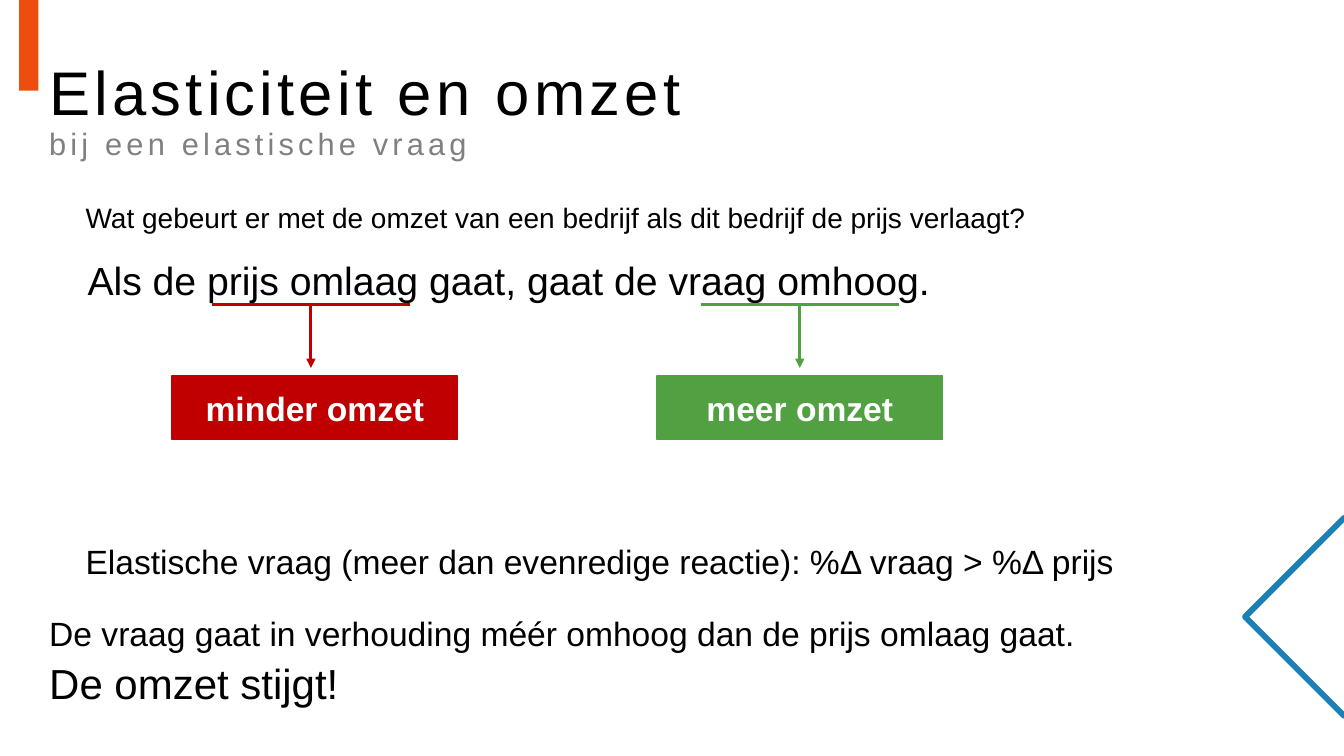
from dataclasses import dataclass
from lxml.etree import SubElement
from pptx import Presentation
from pptx.dml.color import RGBColor
from pptx.enum.shapes import MSO_CONNECTOR as Connector, MSO_SHAPE as Shape
from pptx.enum.text import MSO_ANCHOR as Anchor, PP_ALIGN as Align
from pptx.oxml.ns import qn
from pptx.util import Pt


@dataclass(frozen=True)
class Theme:
    font: str = "Arial"
    ink: str = "000000"
    muted: str = "808080"
    white: str = "FFFFFF"
    orange: str = "ED4D0F"
    blue: str = "1A80B6"
    red: str = "C00000"
    green: str = "51A041"
    title: int = 44
    subtitle: int = 22
    question: int = 20
    statement: int = 28
    text: int = 24
    conclusion: int = 30


THEME = Theme()


def rgb(code):
    return RGBColor.from_string(code)


def add_run(para, text, size, color=THEME.ink, bold=False, tracking=0):
    run = para.add_run()
    run.text = text
    run.font.name = THEME.font
    run.font.size = Pt(size)
    run.font.bold = bold
    run.font.color.rgb = rgb(color)
    if tracking:
        run._r.get_or_add_rPr().set("spc", str(tracking * 100))


def add_text_frame(page, box):
    frame = page.shapes.add_textbox(*map(Pt, box)).text_frame
    frame.word_wrap = True
    return frame


def add_rectangle(page, box, color):
    shape = page.shapes.add_shape(Shape.RECTANGLE, *map(Pt, box))
    shape.shadow.inherit = False
    shape.fill.solid()
    shape.fill.fore_color.rgb = rgb(color)
    shape.line.color.rgb = rgb(color)
    shape.line.width = Pt(1)
    return shape


def add_line(page, start, end, color, arrow=False):
    line = page.shapes.add_connector(Connector.STRAIGHT, *map(Pt, start + end))
    line.line.color.rgb = rgb(color)
    line.line.width = Pt(2.25)
    if arrow:
        SubElement(line.line._get_or_add_ln(), qn("a:tailEnd"), type="triangle")
    SubElement(line._element.spPr, qn("a:effectLst"))


# Corner decorations
def add_decoration(page, box):
    left, top, width, height = box
    bar = add_rectangle(page, (left + 13.7, top - 18, 13.7, 82.8), THEME.orange)
    bar.line.fill.background()

    right, tip = left + width, top + 440.6
    reach, overhang = 70.6, 7
    outline = [(right + overhang, tip - reach + 7.2),
               (right + overhang, tip + reach - 7.2),
               (right, tip + reach), (right - reach, tip), (right, tip - reach)]
    points = [(Pt(x), Pt(y)) for x, y in outline]
    builder = page.shapes.build_freeform(*points[0])
    builder.add_line_segments(points[1:], close=True)
    chevron = builder.convert_to_shape()
    chevron.shadow.inherit = False
    chevron.fill.background()
    chevron.line.color.rgb = rgb(THEME.blue)
    chevron.line.width = Pt(4.25)


# Title and subtitle
def add_heading(page, box):
    frame = add_text_frame(page, box)
    frame.vertical_anchor = Anchor.MIDDLE
    para = frame.paragraphs[0]
    para.line_spacing = 0.9
    add_run(para, "Elasticiteit en omzet", THEME.title, tracking=3)
    para.add_line_break()
    add_run(para, "bij een elastische vraag", THEME.subtitle, THEME.muted, tracking=3)


# One line of running text
def add_sentence(page, box, text, size, align=Align.LEFT):
    para = add_text_frame(page, box).paragraphs[0]
    para.alignment = align
    add_run(para, text, size)


# Underlined words, with an arrow down to their effect
def add_effect(page, box, underline_left, label, color):
    left, top, width, height = box
    underline_top, underline_width = top - 51.1, 141.8
    middle = underline_left + underline_width / 2
    add_line(page, (underline_left, underline_top),
             (underline_left + underline_width, underline_top), color)
    add_line(page, (middle, underline_top), (middle, top - 5.8), color, arrow=True)
    frame = add_rectangle(page, box, color).text_frame
    frame.vertical_anchor = Anchor.MIDDLE
    frame.paragraphs[0].alignment = Align.CENTER
    add_run(frame.paragraphs[0], label, THEME.text, THEME.white, bold=True)


# Closing lines
def add_conclusion(page, box):
    frame = add_text_frame(page, box)
    lines = [("De vraag gaat in verhouding méér omhoog dan de prijs omlaag gaat.", THEME.text),
             ("De omzet stijgt!", THEME.conclusion)]
    for index, (text, size) in enumerate(lines):
        para = frame.add_paragraph() if index else frame.paragraphs[0]
        para.line_spacing = 0.8
        para.space_before = Pt(10)
        add_run(para, text, size)


def main():
    deck = Presentation()
    deck.slide_width, deck.slide_height = Pt(960), Pt(540)
    page = deck.slides.add_slide(deck.slide_layouts[6])

    add_decoration(page, (0, 0, 960, 540))
    add_heading(page, (28.1, 28.1, 908, 104.4))
    add_conclusion(page, (28.1, 440, 908, 72))
    add_sentence(page, (54, 383, 788.4, 36),
                 "Elastische vraag (meer dan evenredige reactie): %Δ vraag > %Δ prijs",
                 THEME.text)
    add_sentence(page, (54, 139.7, 783.4, 38.2),
                 "Wat gebeurt er met de omzet van een bedrijf als dit bedrijf de prijs verlaagt?",
                 THEME.question)
    add_sentence(page, (54, 179.3, 618.5, 51.1),
                 "Als de prijs omlaag gaat, gaat de vraag omhoog.",
                 THEME.statement, Align.CENTER)
    add_effect(page, (123, 268.6, 203.8, 45.4), 151.2, "minder omzet", THEME.red)
    add_effect(page, (469.4, 268.6, 203.8, 45.4), 500.4, "meer omzet", THEME.green)
    deck.save("out.pptx")


if __name__ == "__main__":
    main()
